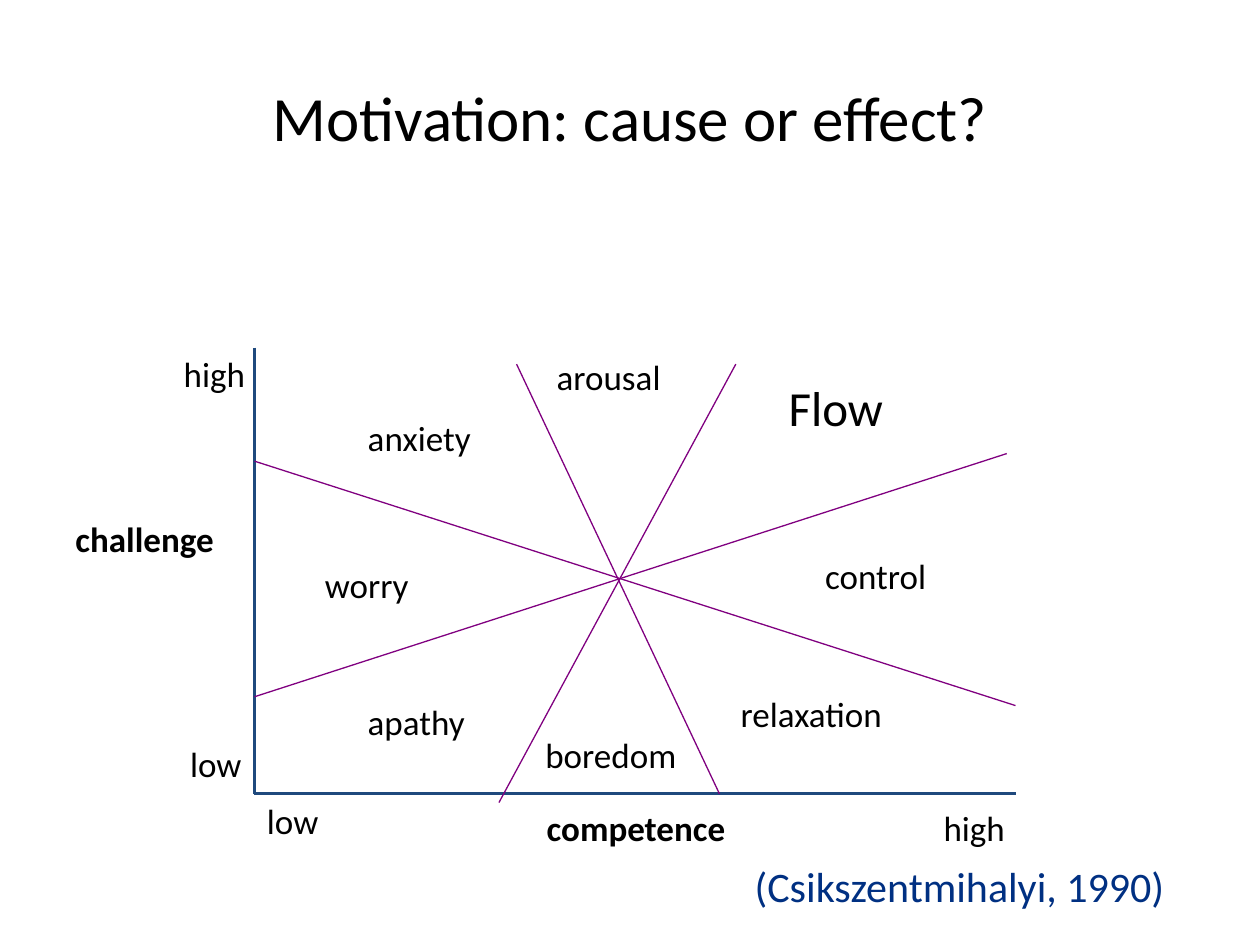
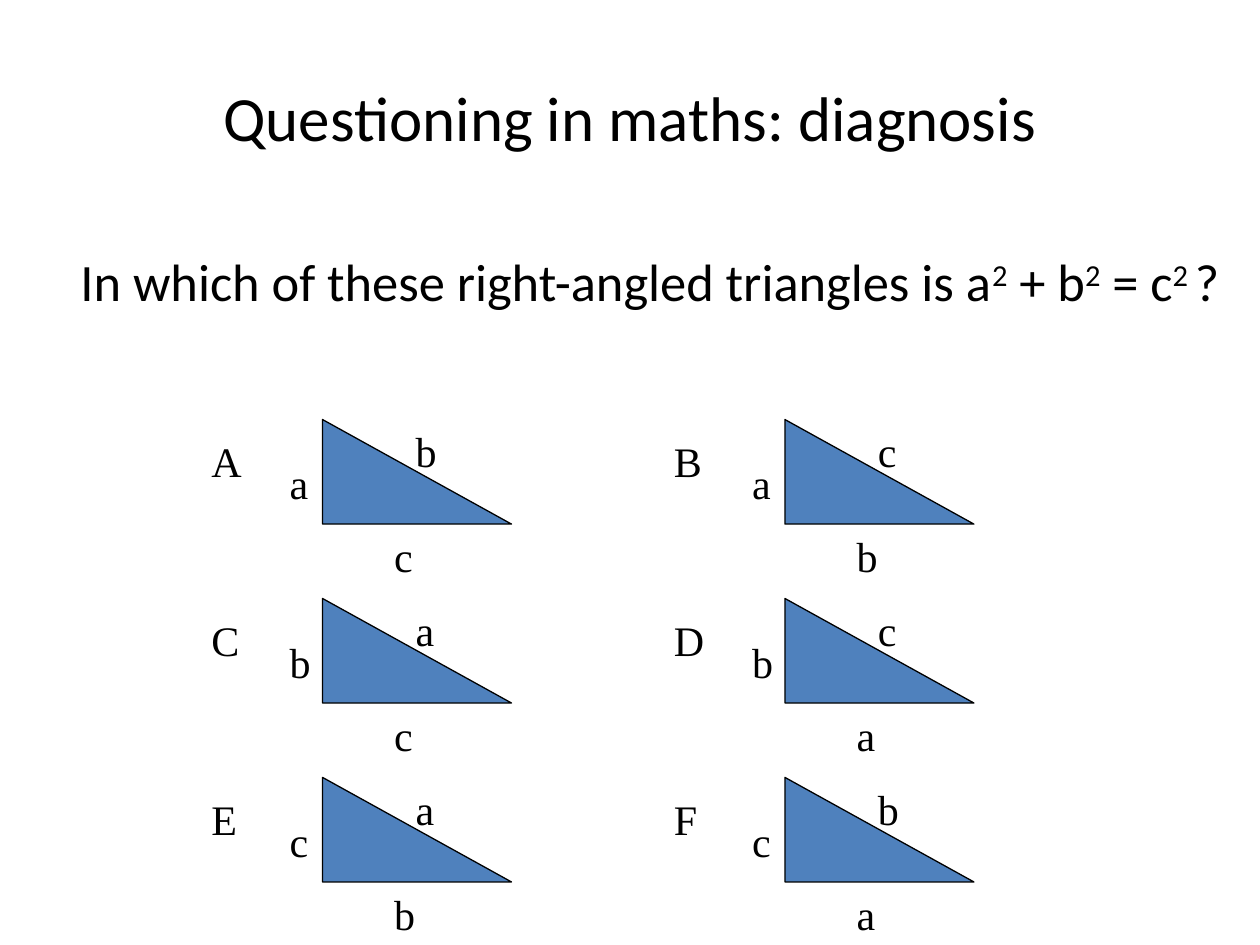
import pptx
import pptx.dml.color
import pptx.enum.shapes
import pptx.enum.text
import pptx.oxml.ns
import pptx.util
from lxml import etree
from pptx.util import Inches

BLACK = "000000"
AXIS_BLUE = "1F497D"
SPOKE_PURPLE = "800080"
CITATION_BLUE = "003082"
TRIANGLE_BLUE = "4F81BD"
SANS = "Calibri"
SERIF = "Times New Roman"


def color(hex_string):
    return pptx.dml.color.RGBColor.from_string(hex_string)


def add_text(slide, parts, left, top, width, height, size=20, font=SANS,
             font_color=BLACK, bold=False, centered=False):
    shape = slide.shapes.add_textbox(Inches(left), Inches(top), Inches(width), Inches(height))
    text_frame = shape.text_frame
    text_frame.word_wrap = True
    paragraph = text_frame.paragraphs[0]
    if centered:
        text_frame.vertical_anchor = pptx.enum.text.MSO_ANCHOR.MIDDLE
        paragraph.alignment = pptx.enum.text.PP_ALIGN.CENTER
    for part in parts:
        run = paragraph.add_run()
        run.text = part
        run.font.size = pptx.util.Pt(size)
        run.font.name = font
        run.font.bold = bold
        run.font.color.rgb = color(font_color)
    return paragraph


presentation = pptx.Presentation()
presentation.slide_width = Inches(10)
presentation.slide_height = Inches(7.5)

slides = []
for title in ["Motivation: cause or effect?", "Questioning in maths: diagnosis"]:
    slide = presentation.slides.add_slide(presentation.slide_layouts[6])
    add_text(slide, [title], 0.5, 0.3, 9, 1.25, size=36, centered=True)
    slides.append(slide)
motivation_slide, triangles_slide = slides

axis_left, axis_bottom, axis_right = 2.02, 6.3, 8.06
axes = [
    (axis_left, 2.76, axis_left, axis_bottom),
    (axis_left, axis_bottom, axis_right, axis_bottom),
]
spokes = [
    (axis_left, 5.53, 7.99, 3.6),
    (axis_right, 5.6, axis_left, 3.66),
    (5.71, axis_bottom, 4.1, 2.89),
    (5.84, 2.89, 3.96, axis_bottom + 0.07),
]
for lines, line_color, line_width in [(axes, AXIS_BLUE, 1.5), (spokes, SPOKE_PURPLE, 0.75)]:
    for ends in lines:
        connector = motivation_slide.shapes.add_connector(
            pptx.enum.shapes.MSO_CONNECTOR.STRAIGHT, *[Inches(value) for value in ends])
        connector.line.color.rgb = color(line_color)
        connector.line.width = pptx.util.Pt(line_width)
        etree.SubElement(connector._element.spPr, pptx.oxml.ns.qn("a:effectLst"))

for label, left, top, width in [("competence", 4.24, 6.35, 1.82), ("challenge", 0.5, 4.06, 1.48)]:
    add_text(motivation_slide, [label], left, top, width, 0.43, bold=True)

for label, left, top, width in [
    ("apathy", 2.82, 5.51, 1.03),
    ("boredom", 4.23, 5.77, 1.3),
    ("relaxation", 5.78, 5.45, 1.41),
    ("arousal", 4.32, 2.77, 1.36),
    ("anxiety", 2.82, 3.26, 1.08),
    ("worry", 2.48, 4.42, 0.88),
    ("control", 6.45, 4.35, 1.03),
    ("high", 1.36, 2.75, 0.79),
    ("low", 1.41, 5.84, 0.62),
    ("low", axis_left, axis_bottom, 0.79),
    ("high", 7.39, 6.35, 0.73),
]:
    add_text(motivation_slide, [label], left, top, width, 0.43)

add_text(motivation_slide, ["Flow"], 6.16, 2.95, 1.02, 0.57, size=28)
add_text(motivation_slide, ["(Csikszentmihalyi, 1990)"], 5.47, 6.78, 4.29, 0.5,
         size=24, font_color=CITATION_BLUE, centered=True)

question = add_text(
    triangles_slide,
    ["In which of these right-angled triangles is a", "2", " + b", "2", " = c", "2 ", "?"],
    0.54, 1.93, 9.46, 0.61, size=30)
for exponent in question.runs[1::2]:
    exponent._r.get_or_add_rPr().set("baseline", "30000")

triangles = [
    ("A", "a", "c", "b"), ("B", "a", "b", "c"),
    ("C", "b", "c", "a"), ("D", "b", "a", "c"),
    ("E", "c", "b", "a"), ("F", "c", "a", "b"),
]
for index, (name, upright, base, hypotenuse) in enumerate(triangles):
    row, column = divmod(index, 2)
    left = 2.56 + column * 3.67
    top = 3.33 + row * 1.42
    triangle = triangles_slide.shapes.add_shape(
        pptx.enum.shapes.MSO_SHAPE.RIGHT_TRIANGLE,
        Inches(left), Inches(top), Inches(1.5), Inches(0.83))
    triangle.shadow.inherit = False
    triangle.fill.solid()
    triangle.fill.fore_color.rgb = color(TRIANGLE_BLUE)
    triangle.line.color.rgb = color(BLACK)
    triangle.line.width = pptx.util.Pt(0.75)
    for letter, across, down, width in [
        (name, -0.98, 0.08, 0.48),
        (upright, -0.36, 0.25, 0.58),
        (base, 0.47, 0.83, 0.37),
        (hypotenuse, 0.64, 0, 0.37),
    ]:
        add_text(triangles_slide, [letter], left + across, top + down, width, 0.5,
                 size=24, font=SERIF)

presentation.save("out.pptx")
